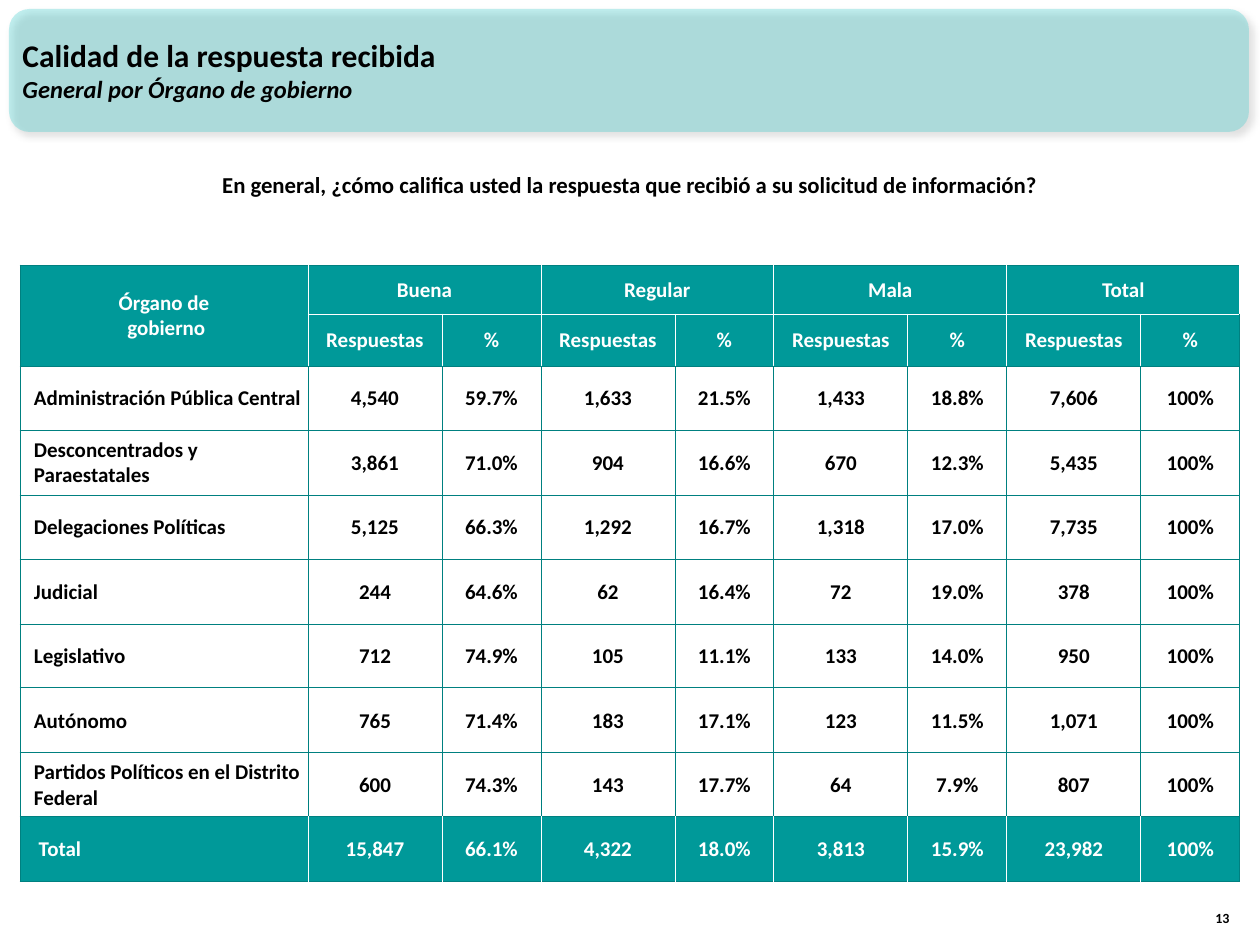
"""Builds the slide on the quality of the answers received, by government body."""
import pptx
import pptx.dml.color
import pptx.enum.shapes
import pptx.enum.text
import pptx.oxml
import pptx.oxml.ns
import pptx.util

SCALE = 914400 / 126
HUES = {"aqua": "33CCCC", "teal": "009999", "edge": "008080", "white": "FFFFFF", "black": "000000"}
ALIGN = pptx.enum.text.PP_ALIGN
ANCHOR = pptx.enum.text.MSO_ANCHOR
GROUPS = ["Buena", "Regular", "Mala", "Total"]
BODY = [
    ["Administración Pública Central", "4,540", "59.7%", "1,633", "21.5%", "1,433", "18.8%", "7,606", "100%"],
    ["Desconcentrados y Paraestatales", "3,861", "71.0%", "904", "16.6%", "670", "12.3%", "5,435", "100%"],
    ["Delegaciones Políticas", "5,125", "66.3%", "1,292", "16.7%", "1,318", "17.0%", "7,735", "100%"],
    ["Judicial", "244", "64.6%", "62", "16.4%", "72", "19.0%", "378", "100%"],
    ["Legislativo", "712", "74.9%", "105", "11.1%", "133", "14.0%", "950", "100%"],
    ["Autónomo", "765", "71.4%", "183", "17.1%", "123", "11.5%", "1,071", "100%"],
    ["Partidos Políticos en el Distrito Federal", "600", "74.3%", "143", "17.7%", "64", "7.9%", "807", "100%"],
    [" Total", "15,847", "66.1%", "4,322", "18.0%", "3,813", "15.9%", "23,982", "100%"],
]


def px(size):
    return pptx.util.Emu(round(size * SCALE))


def hue(name):
    return pptx.dml.color.RGBColor.from_string(HUES[name])


def node(text):
    return pptx.oxml.parse_xml(text.replace(" ", f" {pptx.oxml.ns.nsdecls('a')} ", 1))


class Page:
    def __init__(self, deck, font):
        self.font = font
        self.slide = deck.slides.add_slide(deck.slide_layouts[6])

    def style(self, par, size, color="black", align=ALIGN.LEFT, slant=False):
        par.alignment = align
        for run in par.runs:
            face = run.font
            face.name, face.size = self.font, pptx.util.Pt(size)
            face.bold, face.italic = True, slant
            face.color.rgb = hue(color)

    def banner(self, box):
        kind = pptx.enum.shapes.MSO_SHAPE.ROUNDED_RECTANGLE
        shape = self.slide.shapes.add_shape(kind, *map(px, box))
        shape.fill.solid()
        shape.fill.fore_color.rgb = hue("aqua")
        tint = shape.fill._xPr.find(".//" + pptx.oxml.ns.qn("a:srgbClr"))
        tint.append(node('<a:alpha val="30000"/>'))
        shape.line.fill.background()
        shape.shadow.inherit = False
        glow = shape._element.spPr.find(pptx.oxml.ns.qn("a:effectLst"))
        glow.append(node('<a:outerShdw blurRad="50800" dist="38100" dir="2700000" algn="tl" rotWithShape="0">'
                         f'<a:srgbClr val="{HUES["black"]}"><a:alpha val="40000"/></a:srgbClr></a:outerShdw>'))

    def text(self, box, lines, align=ALIGN.LEFT, anchor=ANCHOR.TOP):
        frame = self.slide.shapes.add_textbox(*map(px, box)).text_frame
        frame.word_wrap = True
        frame.vertical_anchor = anchor
        frame.text = "\n".join(words for words, _, _ in lines)
        for par, (_, size, slant) in zip(frame.paragraphs, lines):
            self.style(par, size, align=align, slant=slant)

    def cell(self, cell, words, dark, left, edges):
        cell.margin_left = cell.margin_top = cell.margin_right = px(1)
        cell.margin_bottom = 0
        cell.vertical_anchor = ANCHOR.MIDDLE
        cell.text_frame.text = words
        for par in cell.text_frame.paragraphs:
            self.style(par, 12, "white" if dark else "black", ALIGN.LEFT if left else ALIGN.CENTER)
            if left:
                par._p.get_or_add_pPr().set("marL", str(px(13)))
        props = cell._tc.get_or_add_tcPr()
        for side, pale in zip("LRTB", edges):
            color = HUES["white" if pale else "edge"]
            props.append(node(f'<a:ln{side} w="6350"><a:solidFill><a:srgbClr val="{color}"/>'
                              f'</a:solidFill></a:ln{side}>'))
        if dark:
            cell.fill.solid()
            cell.fill.fore_color.rgb = hue("teal")
        else:
            cell.fill.background()

    def table(self, left, top, cols, rows, data):
        box = (left, top, sum(cols), sum(rows))
        grid = self.slide.shapes.add_table(len(rows), len(cols), *map(px, box)).table
        grid.first_row = grid.horz_banding = False
        for col, width in zip(grid.columns, cols):
            col.width = px(width)
        for row, height in zip(grid.rows, rows):
            row.height = px(height)
        last = len(rows) - 1
        for r, line in enumerate(data):
            dark = r in (0, 1, last)
            for c, words in enumerate(line):
                edges = (dark and c > 0, dark and c < len(cols) - 1, r == 1 and c > 0, r == 0 and c > 0)
                self.cell(grid.cell(r, c), words, dark, c == 0 and r > 1, edges)
        grid.cell(0, 0).merge(grid.cell(1, 0))
        for c in range(1, len(cols), 2):
            grid.cell(0, c).merge(grid.cell(0, c + 1))


def main():
    deck = pptx.Presentation()
    deck.slide_width, deck.slide_height = px(1260), px(945)
    page = Page(deck, "Calibri")
    page.banner((9, 9, 1240, 123))
    page.text((10, 11, 1156, 118), [("Calidad de la respuesta recibida", 18, False),
                                    ("General por Órgano de gobierno", 14, True)], anchor=ANCHOR.MIDDLE)
    page.text((1192, 883, 50, 50), [("13", 8, False)], ALIGN.RIGHT, ANCHOR.BOTTOM)
    ask = "En general, ¿cómo califica usted la respuesta que recibió a su solicitud de información?"
    page.text((112, 165, 1034, 40), [(ask, 13, False)], ALIGN.CENTER)
    top = ["Órgano de\n gobierno"] + [word for group in GROUPS for word in (group, "")]
    sub = [""] + ["Respuestas", "%"] * len(GROUPS)
    page.table(20, 265, [288] + [134, 99] * len(GROUPS), [49, 52] + [64, 65] * 4, [top, sub] + BODY)
    deck.save("out.pptx")


if __name__ == "__main__":
    main()
